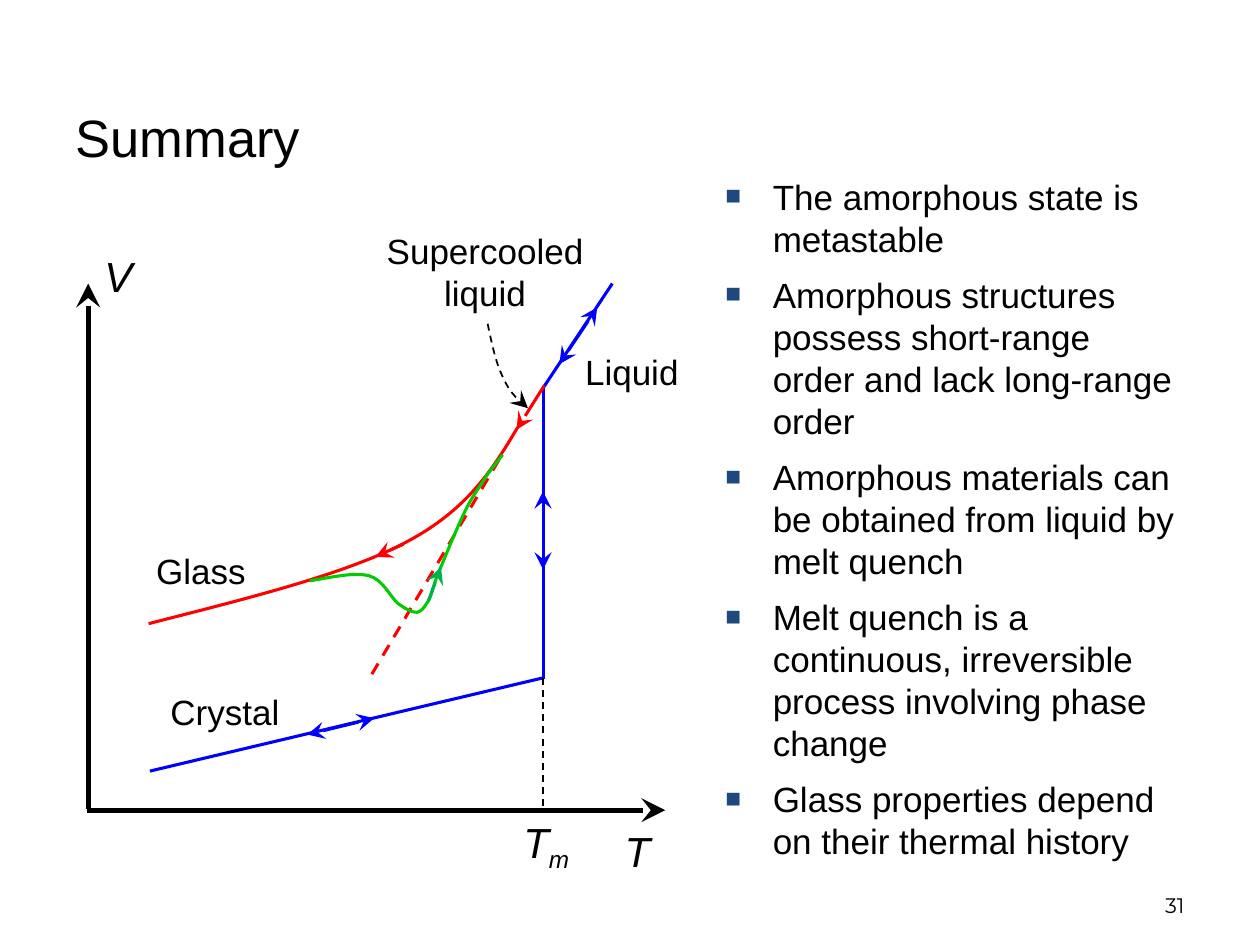
from lxml.etree import SubElement
from pptx import Presentation
from pptx.dml.color import RGBColor
from pptx.enum.dml import MSO_LINE
from pptx.enum.shapes import MSO_CONNECTOR
from pptx.enum.text import MSO_ANCHOR, PP_ALIGN
from pptx.oxml.ns import qn
from pptx.util import Inches, Pt

BLACK = RGBColor(0, 0, 0)
BLUE = RGBColor(0, 0, 255)
RED = RGBColor(255, 0, 0)
LIME = RGBColor(0, 0xCC, 0)
GREEN = RGBColor(0, 0xB0, 0x50)
NAVY = RGBColor(0x1F, 0x49, 0x7D)
LEFT, CENTER, RIGHT = PP_ALIGN.LEFT, PP_ALIGN.CENTER, PP_ALIGN.RIGHT

deck = Presentation()
deck.slide_width, deck.slide_height = Inches(10), Inches(7.5)
page = deck.slides.add_slide(deck.slide_layouts[5])
shapes = page.shapes

title = shapes.title
title.left, title.top, title.width, title.height = map(Inches, (0.5, 0.5, 8.92, 1.17))


def write(shape, lines, size, align=LEFT, anchor=MSO_ANCHOR.TOP, font="Arial", italic=False):
    """Fill a shape with one paragraph per line, all in one style."""
    frame = shape.text_frame
    frame.text = "\n".join(lines)
    frame.vertical_anchor = anchor
    frame.word_wrap = True
    for para in frame.paragraphs:
        para.alignment = align
        for span in para.runs:
            span.font.name, span.font.size = font, Pt(size)
            span.font.italic = italic
            span.font.color.rgb = BLACK


def add_curve(knots):
    """Draw an open Bezier: a start point, then two controls and an end per piece."""
    builder = shapes.build_freeform(*map(Inches, knots[0]))
    builder.add_line_segments([list(map(Inches, knot)) for knot in knots[1:]], close=False)
    curve = builder.convert_to_shape()
    curve.fill.background()
    segments = list(curve._element.iter(qn("a:lnTo")))
    outline = segments[0].getparent()
    for number, segment in enumerate(segments):
        if number % 3 == 0:
            bezier = SubElement(outline, qn("a:cubicBezTo"))
        bezier.append(segment[0])
        outline.remove(segment)
    return curve


write(title, ["Summary"], 30, anchor=MSO_ANCHOR.MIDDLE)

# Conclusions
points = [
    "The amorphous state is metastable",
    "Amorphous structures possess short-range order and lack long-range order",
    "Amorphous materials can be obtained from liquid by melt quench",
    "Melt quench is a continuous, irreversible process involving phase change",
    "Glass properties depend on their thermal history",
]
summary = shapes.add_textbox(*map(Inches, (5.66, 1.34, 3.76, 5.67)))
write(summary, points, 20)
for number, para in enumerate(summary.text_frame.paragraphs):
    para.space_before = Pt(8 if number else 0)
    properties = para._p.get_or_add_pPr()
    properties.set("marL", str(Inches(0.375)))
    properties.set("indent", str(-Inches(0.375)))
    bullet_color = SubElement(properties, qn("a:buClr"))
    SubElement(bullet_color, qn("a:srgbClr"), val=str(NAVY))
    SubElement(properties, qn("a:buSzPct"), val="75000")
    SubElement(properties, qn("a:buFont"), typeface="Arial")
    SubElement(properties, qn("a:buChar"), char="■")

# Axes, phase lines, curves and direction arrows, from back to front
melting_x, crystal_y, liquid_y = 4.31, 5.38, 3.06
one_way, both_ways = ["tailEnd"], ["headEnd", "tailEnd"]
cooling = [(4.11, 3.39), (3.92, 3.71), (3.72, 4.04), (3.23, 4.3),
           (2.74, 4.56), (1.96, 4.75), (1.18, 4.95)]
pointer = [(3.87, 2.57), (3.9, 2.71), (3.93, 2.86), (3.98, 2.97),
           (4.03, 3.08), (4.1, 3.18), (4.19, 3.24)]
reheating = [(2.46, 4.61), (2.64, 4.58), (2.81, 4.54), (2.93, 4.57),
             (3.04, 4.6), (3.1, 4.74), (3.16, 4.79), (3.23, 4.84), (3.27, 4.86), (3.31, 4.86),
             (3.35, 4.85), (3.36, 4.83), (3.4, 4.77), (3.43, 4.72), (3.44, 4.63), (3.5, 4.5),
             (3.55, 4.38), (3.64, 4.16), (3.7, 4.04), (3.76, 3.92), (3.82, 3.85), (3.86, 3.78),
             (3.91, 3.71), (3.95, 3.66), (3.99, 3.61)]
strokes = [
    ([(0.7, 6.42), (0.7, 2.25)], BLACK, 2.75, False, one_way),
    ([(0.69, 6.43), (5.28, 6.43)], BLACK, 2.75, False, one_way),
    ([(4.86, 2.25), (melting_x, 3.08)], BLUE, 1.75, False, []),
    ([(melting_x, liquid_y), (melting_x, 5.39)], BLUE, 1.75, False, []),
    ([(melting_x, crystal_y), (1.19, 6.12)], BLUE, 1.75, False, []),
    ([(melting_x, crystal_y), (melting_x, 6.4)], BLACK, 1, True, []),
    ([(4.74, 2.44), (4.44, 2.89)], BLUE, 1.75, False, both_ways),
    ([(melting_x, 3.9), (melting_x, 4.52)], BLUE, 1.75, False, both_ways),
    ([(2.97, 5.7), (2.44, 5.83)], BLUE, 1.75, False, both_ways),
    (cooling, RED, 1.75, False, []),
    ([(4.32, liquid_y), (4.1, 3.41)], RED, 1.75, False, one_way),
    ([(3.2, 4.32), (2.98, 4.42)], RED, 1.75, False, one_way),
    (pointer, BLACK, 1, True, one_way),
    ([(3.96, 3.65), (2.94, 5.37)], RED, 1.75, True, []),
    (reheating, LIME, 1.75, False, []),
    ([(3.4, 4.77), (3.5, 4.5)], GREEN, 1.75, False, one_way),
]
for knots, color, width, dashed, arrows in strokes:
    if len(knots) == 2:
        stroke = shapes.add_connector(MSO_CONNECTOR.STRAIGHT, *map(Inches, knots[0] + knots[1]))
    else:
        stroke = add_curve(knots)
    stroke.line.color.rgb = color
    stroke.line.width = Pt(width)
    if dashed:
        stroke.line.dash_style = MSO_LINE.DASH
    properties = stroke._element.spPr
    for end in arrows:
        SubElement(properties.find(qn("a:ln")), qn("a:" + end),
                   type="stealth", w="lg", len="lg")
    SubElement(properties, qn("a:effectLst"))

# Labels and page number
labels = [
    ("V", (0.73, 1.94, 0.43, 0.5), 24, LEFT),
    ("T", (4.86, 6.5, 0.41, 0.5), 24, LEFT),
    ("Tm", (4.04, 6.43, 0.59, 0.5), 24, CENTER),
    ("Supercooled liquid", (2.89, 1.77, 1.92, 0.77), 20, CENTER),
    ("Liquid", (4.41, 2.73, 1.21, 0.44), 20, CENTER),
    ("Glass", (0.99, 4.31, 1.21, 0.44), 20, CENTER),
    ("Crystal", (1.18, 5.43, 1.21, 0.44), 20, CENTER),
]
for text, place, size, align in labels:
    box = shapes.add_textbox(*map(Inches, place))
    write(box, [text], size, align, italic=size == 24)
    if text == "Tm":
        box.text_frame.word_wrap = False
        para = box.text_frame.paragraphs[0]
        para.runs[0].text = "T"
        subscript = para.add_run()
        subscript.text = "m"
        subscript.font.name, subscript.font.size = "Arial", Pt(size)
        subscript.font.italic = True
        subscript.font.color.rgb = BLACK
        subscript.font._element.set("baseline", "-25000")

page_number = shapes.add_textbox(*map(Inches, (7.17, 6.83, 2.33, 0.5)))
write(page_number, ["31"], 12, RIGHT, MSO_ANCHOR.BOTTOM, "Montserrat")

deck.save("out.pptx")
